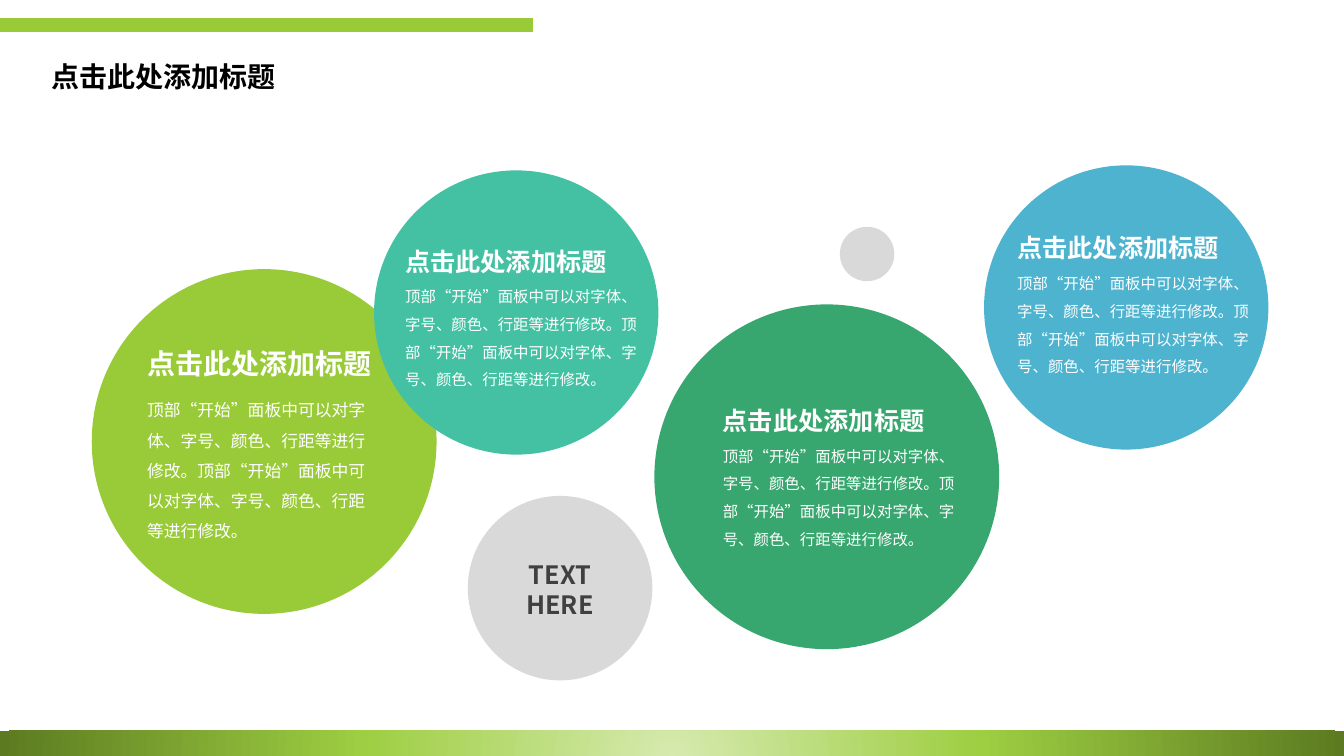
from dataclasses import dataclass
from typing import Optional

from lxml import etree
from pptx import Presentation
from pptx.dml.color import RGBColor
from pptx.enum.shapes import MSO_CONNECTOR as Connector, MSO_SHAPE as Preset
from pptx.enum.text import MSO_ANCHOR as Anchor, MSO_AUTO_SIZE as AutoSize, PP_ALIGN as Align
from pptx.oxml import parse_xml
from pptx.oxml.ns import nsdecls, qn
from pptx.util import Inches, Pt


@dataclass(frozen=True)
class Theme:
    font: str = "Noto Sans CJK SC"
    lime: str = "99CB38"
    green: str = "37A76F"
    teal: str = "44C1A3"
    blue: str = "4EB3CF"
    grey: str = "D9D9D9"
    black: str = "000000"
    dark: str = "404040"
    white: str = "FFFFFF"
    footer_stops: tuple = ((0, "D6EAAF"), (46, "9ECE42"), (100, "5C7B20"))
    title_size: int = 20
    label_size: int = 18
    large_body: int = 12
    body_size: int = 11


@dataclass(frozen=True)
class Circle:
    left: float
    top: float
    diameter: float
    color: str


@dataclass(frozen=True)
class Caption:
    left: float
    top: float
    heading_height: float = 0.4
    body_offset: float = 0.32
    body_height: float = 1.18
    heading_size: int = 18
    body_size: int = 11


THEME = Theme()
HEADING = "点击此处添加标题"
SENTENCE = "顶部“开始”面板中可以对字体、字号、颜色、行距等进行修改。"
CAPTION_WIDTH = 2.52

CIRCLES = (
    Circle(0.91, 2.67, 3.42, THEME.lime),
    Circle(6.49, 3.02, 3.42, THEME.green),
    Circle(3.71, 1.69, 2.82, THEME.teal),
    Circle(9.76, 1.64, 2.82, THEME.blue),
    Circle(8.33, 2.25, 0.54, THEME.grey),
    Circle(4.64, 4.92, 1.83, THEME.grey),
)
CAPTIONS = (
    Caption(1.36, 3.39, 0.44, 0.43, 1.58, THEME.title_size, THEME.large_body),
    Caption(3.92, 2.39),
    Caption(7.07, 3.97),
    Caption(9.99, 2.26),
)


def style_paragraph(paragraph, size: int, color: str, bold: bool = False,
                    spacing: Optional[float] = None, align: Align = Align.LEFT) -> None:
    paragraph.alignment = align
    if spacing:
        paragraph.line_spacing = spacing
    font = paragraph.font
    font.name, font.size, font.bold = THEME.font, Pt(size), bold
    font.color.rgb = RGBColor.from_string(color)
    # The East Asian typeface has no public setter
    defaults = paragraph._p.get_or_add_pPr().find(qn("a:defRPr"))
    etree.SubElement(defaults, qn("a:ea"), typeface=THEME.font)


def add_text(slide, left: float, top: float, width: float, height: float, text: str,
             size: int, color: str, bold: bool = False,
             spacing: Optional[float] = None, align: Align = Align.LEFT) -> None:
    box = slide.shapes.add_textbox(Inches(left), Inches(top), Inches(width), Inches(height))
    frame = box.text_frame
    frame.word_wrap = True
    frame.auto_size = AutoSize.SHAPE_TO_FIT_TEXT
    frame.text = text
    for paragraph in frame.paragraphs:
        style_paragraph(paragraph, size, color, bold, spacing, align)


def add_circle(slide, circle: Circle) -> None:
    side = Inches(circle.diameter)
    shape = slide.shapes.add_shape(Preset.OVAL, Inches(circle.left), Inches(circle.top), side, side)
    shape.shadow.inherit = False
    shape.fill.solid()
    shape.fill.fore_color.rgb = RGBColor.from_string(circle.color)
    shape.line.fill.background()


def add_caption(slide, caption: Caption) -> None:
    add_text(slide, caption.left, caption.top + caption.body_offset, CAPTION_WIDTH,
             caption.body_height, SENTENCE * 2, caption.body_size, THEME.white, spacing=1.5)
    add_text(slide, caption.left, caption.top, CAPTION_WIDTH, caption.heading_height,
             HEADING, caption.heading_size, THEME.white, bold=True)


def add_top_rule(slide) -> None:
    rule = slide.shapes.add_connector(Connector.STRAIGHT, 0, Inches(0.25), Inches(5.29), Inches(0.25))
    rule.line.color.rgb = RGBColor.from_string(THEME.lime)
    rule.line.width = Pt(10)
    etree.SubElement(rule._element.spPr, qn("a:effectLst"))


def add_footer_band(slide) -> None:
    band = slide.shapes.add_shape(Preset.RECTANGLE, 0, Inches(7.25), Inches(13.33), Inches(0.29))
    band.shadow.inherit = False
    band.line.fill.background()
    stops = "".join(
        f'<a:gs pos="{position * 1000}"><a:srgbClr val="{color}"/></a:gs>'
        for position, color in THEME.footer_stops
    )
    gradient = parse_xml(
        f'<a:gradFill {nsdecls("a")} rotWithShape="1"><a:gsLst>{stops}</a:gsLst>'
        '<a:path path="circle"><a:fillToRect l="50000" t="130000" r="50000" b="-30000"/></a:path>'
        '</a:gradFill>'
    )
    band._element.spPr.find(qn("a:prstGeom")).addnext(gradient)


def format_title(slide) -> None:
    title = slide.shapes.title
    title.left, title.top = Inches(0.41), Inches(0.49)
    title.width, title.height = Inches(4.88), Inches(0.58)
    frame = title.text_frame
    frame.text = HEADING
    frame.vertical_anchor = Anchor.MIDDLE
    paragraph = frame.paragraphs[0]
    paragraph.space_before = Pt(10)
    style_paragraph(paragraph, THEME.title_size, THEME.black, bold=True, spacing=0.9)


def main() -> None:
    presentation = Presentation()
    presentation.slide_width, presentation.slide_height = Inches(13.33), Inches(7.5)
    slide = presentation.slides.add_slide(presentation.slide_layouts[5])

    # Frame and title
    add_top_rule(slide)
    add_footer_band(slide)
    format_title(slide)

    # Circles, back to front
    for circle in CIRCLES:
        add_circle(slide, circle)

    # Text over the circles
    add_text(slide, 4.72, 5.5, 1.67, 0.71, "TEXT\nHERE", THEME.label_size, THEME.dark,
             bold=True, align=Align.CENTER)
    for caption in CAPTIONS:
        add_caption(slide, caption)

    presentation.save("out.pptx")


if __name__ == "__main__":
    main()
